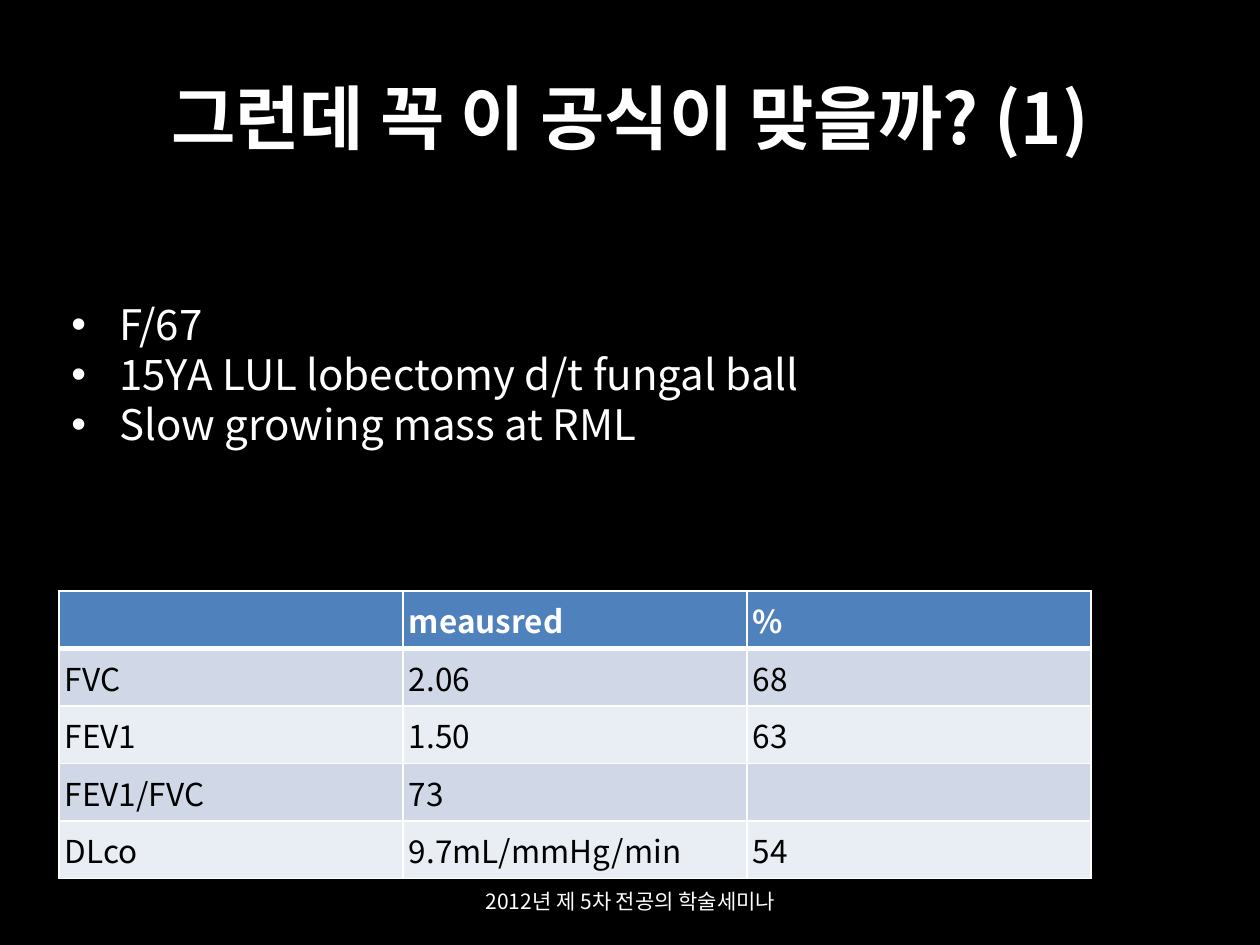
"""Build a dark seminar slide with a case summary and a lung function table."""
import pptx
import pptx.util
import pptx.dml.color
import pptx.enum.text
import pptx.oxml
import pptx.oxml.ns

PX = 914400 // 126
FONT = "Noto Sans CJK KR"
HEX = {"back": "000000", "white": "FFFFFF", "black": "000000",
       "head": "4F81BD", "odd": "D0D8E8", "even": "E9EDF4"}
NS = pptx.oxml.ns.nsdecls("a")
ALIGN = pptx.enum.text.PP_ALIGN
ANCHOR = pptx.enum.text.MSO_ANCHOR


def tint(name):
    return pptx.dml.color.RGBColor.from_string(HEX[name])


def write(para, text, size, color, bold=False):
    run = para.add_run()
    run.text = text
    form = {"name": FONT, "size": pptx.util.Pt(size), "bold": bold}
    for key, val in form.items():
        setattr(run.font, key, val)
    run.font.color.rgb = tint(color)
    run.font._element.append(pptx.oxml.parse_xml(f'<a:ea {NS} typeface="{FONT}"/>'))


deck = pptx.Presentation()
deck.slide_width = 1260 * PX
deck.slide_height = 945 * PX
slide = deck.slides.add_slide(deck.slide_layouts[6])
slide.background.fill.solid()
slide.background.fill.fore_color.rgb = tint("back")

rows = [
    ["", "meausred", "%"],
    ["FVC", "2.06", "68"],
    ["FEV1", "1.50", "63"],
    ["FEV1/FVC", "73", ""],
    ["DLco", "9.7mL/mmHg/min", "54"],
]
grid = slide.shapes.add_table(5, 3, 59 * PX, 591 * PX, 1032 * PX, 260 * PX).table
for r, row in enumerate(rows):
    band = "head" if r == 0 else "odd" if r % 2 else "even"
    for c, text in enumerate(row):
        cell = grid.cell(r, c)
        for side in ("left", "right", "top", "bottom"):
            setattr(cell, "margin_" + side, 6 * PX)
        for side in "LRTB":
            wide = 3 if (r, side) in ((0, "B"), (1, "T")) else 1
            cell._tc.get_or_add_tcPr().append(pptx.oxml.parse_xml(
                f'<a:ln{side} {NS} w="{pptx.util.Pt(wide)}"><a:solidFill>'
                f'<a:srgbClr val="{HEX["white"]}"/></a:solidFill></a:ln{side}>'))
        cell.fill.solid()
        cell.fill.fore_color.rgb = tint(band)
        if text:
            write(cell.text_frame.paragraphs[0], text, 18,
                  "black" if r else "white", r == 0)

parts = [
    ((63, 38, 1134, 158), ["그런데 꼭 이 공식이 맞을까? (1)"], 40, True, False),
    ((59, 300, 1138, 544), ["F/67", "15YA LUL lobectomy d/t fungal ball",
                            "Slow growing mass at RML"], 24, False, True),
    ((431, 876, 399, 50), ["2012년 제 5차 전공의 학술세미나"], 12, False, False),
]
for box, lines, size, bold, list_ in parts:
    frame = slide.shapes.add_textbox(*[n * PX for n in box]).text_frame
    frame.word_wrap = True
    frame.vertical_anchor = ANCHOR.TOP if list_ else ANCHOR.MIDDLE
    for i, line in enumerate(lines):
        para = frame.add_paragraph() if i else frame.paragraphs[0]
        para.alignment = ALIGN.LEFT if list_ else ALIGN.CENTER
        write(para, line, size, "white", bold)
        if list_:
            para.line_spacing = 0.85
            para.space_before = pptx.util.Pt(4)
            prop = para._p.get_or_add_pPr()
            prop.set("marL", str(48 * PX))
            prop.set("indent", str(-48 * PX))
            for tag in ('buFont {} typeface="Arial"', 'buChar {} char="•"'):
                prop.append(pptx.oxml.parse_xml(f"<a:{tag.format(NS)}/>"))

deck.save("out.pptx")
